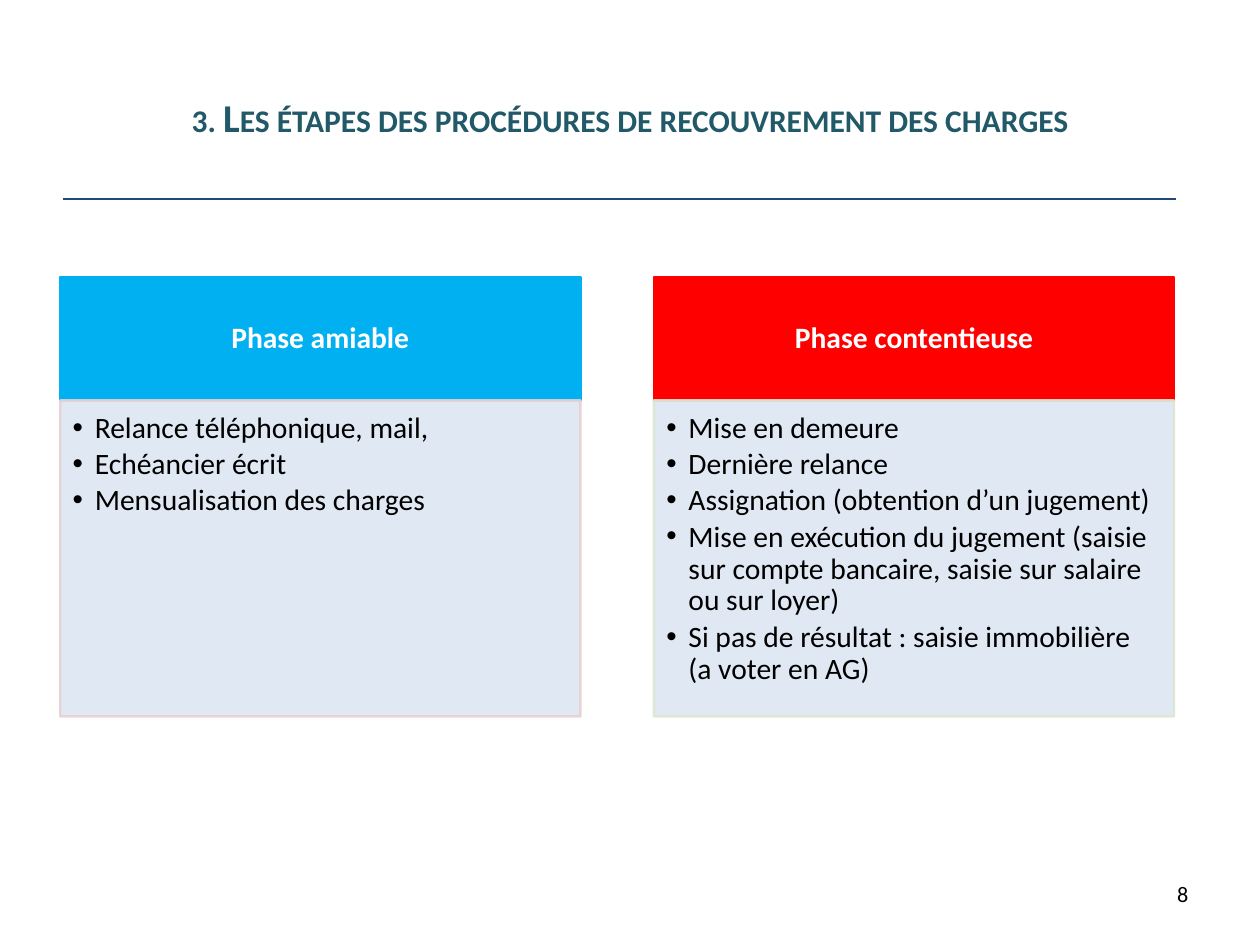
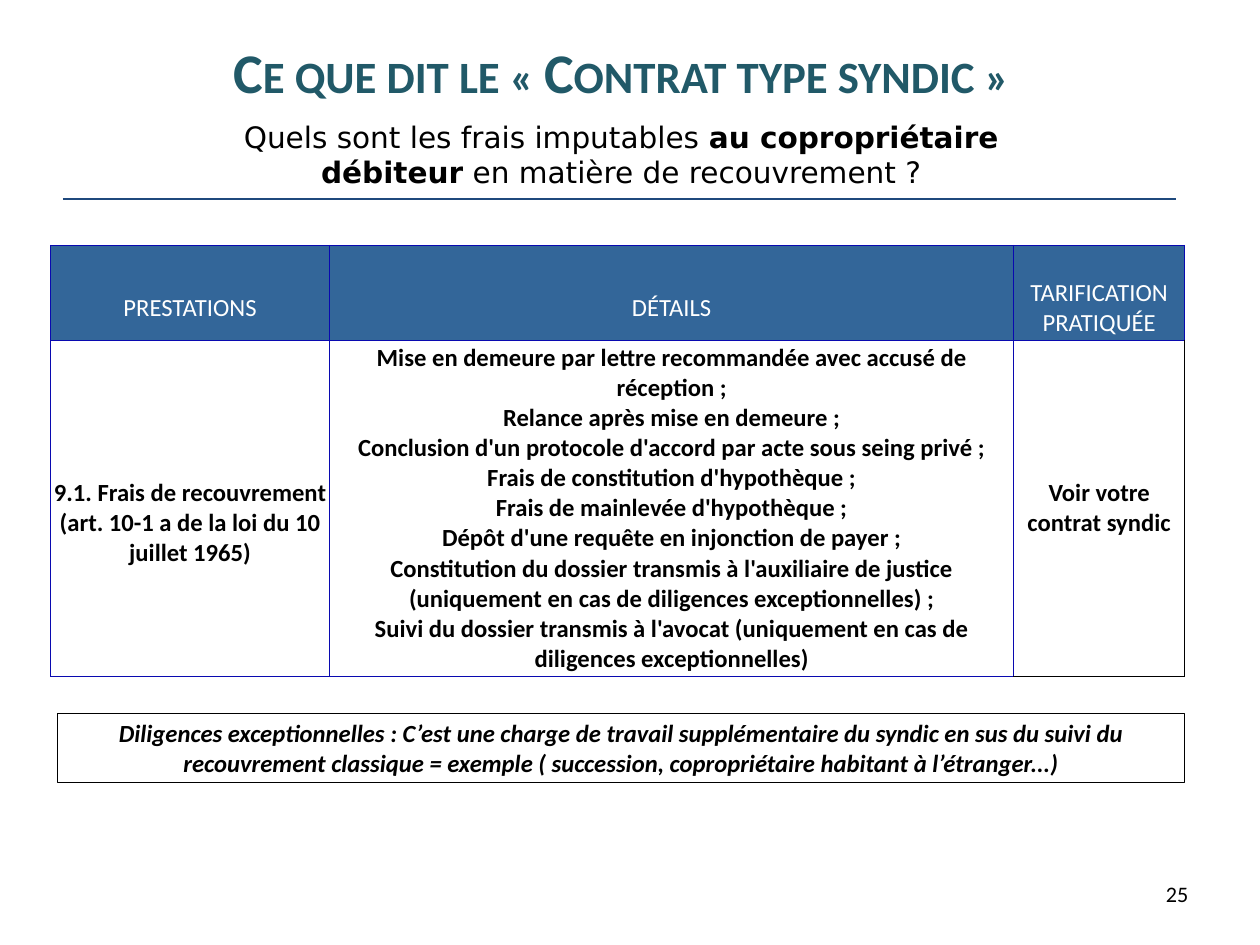
from lxml import etree
from pptx import Presentation
from pptx.dml.color import RGBColor
from pptx.enum.shapes import MSO_CONNECTOR, MSO_SHAPE
from pptx.enum.text import MSO_ANCHOR as Anchor, MSO_AUTO_SIZE as AutoSize, PP_ALIGN as Align
from pptx.oxml.ns import qn
from pptx.util import Inches, Pt

TEAL = RGBColor(0x21, 0x59, 0x68)
NAVY = RGBColor(0x1F, 0x49, 0x7D)
SKY = RGBColor(0x00, 0xB0, 0xF0)
RED = RGBColor(0xFF, 0x00, 0x00)
PALE_BLUE = RGBColor(0xDC, 0xE6, 0xF2)
PALE_PINK = RGBColor(0xE8, 0xD0, 0xD0)
PALE_GREEN = RGBColor(0xDE, 0xE7, 0xD1)
STEEL = RGBColor(0x33, 0x66, 0x99)
GRID_BLUE = RGBColor(0x09, 0x09, 0xB0)
BLACK = RGBColor(0x00, 0x00, 0x00)
WHITE = RGBColor(0xFF, 0xFF, 0xFF)

PHASES = [
    ("Phase amiable", SKY, PALE_PINK, [
        "Relance téléphonique, mail,",
        "Echéancier écrit",
        "Mensualisation des charges",
    ]),
    ("Phase contentieuse", RED, PALE_GREEN, [
        "Mise en demeure",
        "Dernière relance",
        "Assignation (obtention d’un jugement)",
        "Mise en exécution du jugement (saisie sur compte bancaire, "
        "saisie sur salaire ou sur loyer)",
        "Si pas de résultat : saisie immobilière (a voter en AG)",
    ]),
]
HEADINGS = ["PRESTATIONS", "DÉTAILS", "TARIFICATION PRATIQUÉE"]
FEES = [
    ["9.1. Frais de recouvrement", "(art. 10-1 a de la loi du 10 juillet 1965)"],
    [
        "Mise en demeure par lettre recommandée avec accusé de réception ;",
        "Relance après mise en demeure ;",
        "Conclusion d'un protocole d'accord par acte sous seing privé ;",
        "Frais de constitution d'hypothèque ;",
        "Frais de mainlevée d'hypothèque ;",
        "Dépôt d'une requête en injonction de payer ;",
        "Constitution du dossier transmis à l'auxiliaire de justice "
        "(uniquement en cas de diligences exceptionnelles) ;",
        "Suivi du dossier transmis à l'avocat "
        "(uniquement en cas de diligences exceptionnelles)",
    ],
    ["Voir votre contrat syndic"],
]
QUESTION = [
    ("Quels sont les frais imputables ", False),
    ("au copropriétaire débiteur", True),
    (" en matière de recouvrement ?", False),
]
NOTE = ("Diligences exceptionnelles : C’est une charge de travail supplémentaire du syndic "
        "en sus du suivi du recouvrement classique = exemple ( succession, copropriétaire "
        "habitant à l’étranger...)")


def place(part, box):
    part.left, part.top, part.width, part.height = (Inches(length) for length in box)


def set_margins(holder, left, top, right, bottom):
    holder.margin_left, holder.margin_top = Inches(left), Inches(top)
    holder.margin_right, holder.margin_bottom = Inches(right), Inches(bottom)


def style_run(run, size, color=BLACK, bold=False, italic=False, face="Calibri"):
    font = run.font
    font.name, font.size, font.bold, font.italic = face, Pt(size), bold, italic
    font.color.rgb = color


def write(frame, lines, size, align, **style):
    frame.text = "\n".join(lines)
    frame.word_wrap = True
    for paragraph in frame.paragraphs:
        paragraph.alignment = align
        for run in paragraph.runs:
            style_run(run, size, **style)


def add_alpha(part, percent):
    for color in part._element.spPr.iter(qn("a:srgbClr")):
        etree.SubElement(color, qn("a:alpha")).set("val", str(percent * 1000))


def add_frame(slide, title, title_box, title_size, number):
    heading = slide.shapes.title
    place(heading, title_box)
    frame = heading.text_frame
    write(frame, [title], title_size, Align.CENTER, color=TEAL, bold=True)
    frame.auto_size = AutoSize.NONE
    frame.vertical_anchor = Anchor.MIDDLE
    frame.paragraphs[0].runs[0]._r.get_or_add_rPr().set("cap", "small")

    rule = slide.shapes.add_connector(
        MSO_CONNECTOR.STRAIGHT, Inches(0.71), Inches(2.25), Inches(13.27), Inches(2.25))
    rule.line.color.rgb = NAVY
    rule.line.width = Pt(1.5)
    etree.SubElement(rule._element.spPr, qn("a:effectLst"))

    page = slide.shapes.add_textbox(Inches(10.19), Inches(9.89), Inches(3.32), Inches(0.57))
    write(page.text_frame, [number], 18, Align.RIGHT)


def fill_phase(header, body, box, phase):
    name, color, edge, steps = phase
    left, top, width, height = box
    header_height = 1.39
    place(header, (left, top, width, header_height))
    place(body, (left, top + header_height, width, height - header_height))
    for part, fill, line in ((header, color, color), (body, PALE_BLUE, edge)):
        part.fill.solid()
        part.fill.fore_color.rgb = fill
        part.line.color.rgb = line
        part.line.width = Pt(2)
    add_alpha(body, 90)

    write(header.text_frame, [name], 24, Align.CENTER, color=WHITE, bold=True)
    header.text_frame.vertical_anchor = Anchor.MIDDLE
    set_margins(header.text_frame, 0.19, 0.11, 0.19, 0.11)
    write(body.text_frame, steps, 24, Align.LEFT)
    body.text_frame.vertical_anchor = Anchor.TOP
    set_margins(body.text_frame, 0.14, 0.14, 0.19, 0.21)
    for part in (header, body):
        part.text_frame.auto_size = AutoSize.NONE
        for paragraph in part.text_frame.paragraphs:
            paragraph.line_spacing = 0.9
            paragraph.space_before = Pt(0)
    for paragraph in body.text_frame.paragraphs:
        paragraph.space_after = Pt(3.6)
        properties = paragraph._p.get_or_add_pPr()
        properties.set("marL", str(Inches(0.25)))
        properties.set("indent", str(-Inches(0.25)))


def add_borders(cell, colors):
    properties = cell._tc.get_or_add_tcPr()
    for side, color in zip("LRTB", colors):
        border = etree.SubElement(properties, qn(f"a:ln{side}"), w=str(Pt(0.75)))
        fill = etree.SubElement(border, qn("a:solidFill"))
        etree.SubElement(fill, qn("a:srgbClr"), val=str(color))


def add_fee_table(slide, box):
    table = slide.shapes.add_table(2, 3, *(Inches(length) for length in box)).table
    table.first_row = table.horz_banding = False
    for column, width in zip(table.columns, (3.15, 7.72, 1.93)):
        column.width = Inches(width)
    for row, height in zip(table.rows, (1.07, 3.8)):
        row.height = Inches(height)
    rows = [[[heading] for heading in HEADINGS], FEES]
    for r, contents in enumerate(rows):
        for c, lines in enumerate(contents):
            cell = table.cell(r, c)
            is_heading = r == 0
            is_price = r == 1 and c == 2
            outer = BLACK if is_price else GRID_BLUE
            add_borders(cell, (GRID_BLUE, outer, GRID_BLUE, outer))
            cell.fill.solid()
            cell.fill.fore_color.rgb = STEEL if is_heading else WHITE
            cell.vertical_anchor = Anchor.MIDDLE
            lowered = is_heading or c == 0
            side = 0.05 if is_price else 0.03
            set_margins(cell, side, 0.37 if lowered else 0.03, side, 0.03)
            write(cell.text_frame, lines, 20, Align.CENTER,
                  color=WHITE if is_heading else BLACK, bold=not is_heading)


def add_question(slide, box):
    question = slide.shapes.add_textbox(*(Inches(length) for length in box))
    question.text_frame.word_wrap = True
    paragraph = question.text_frame.paragraphs[0]
    paragraph.alignment = Align.CENTER
    for words, bold in QUESTION:
        run = paragraph.add_run()
        run.text = words
        style_run(run, 24, bold=bold, face="DejaVu Sans")


def add_note(slide, box):
    note = slide.shapes.add_shape(MSO_SHAPE.RECTANGLE, *(Inches(length) for length in box))
    note.shadow.inherit = False
    note.fill.background()
    note.line.color.rgb = BLACK
    note.line.width = Pt(0.75)
    write(note.text_frame, [NOTE], 20, Align.CENTER, bold=True, italic=True)
    note.text_frame.vertical_anchor = Anchor.TOP


def build_phases(deck):
    slide = deck.slides.add_slide(deck.slide_layouts.get_by_name("Comparison"))
    add_frame(slide, "3. Les étapes des procédures de recouvrement des charges",
              (0.71, 0.43, 12.8, 1.78), 32, "8")
    parts = {part.placeholder_format.idx: part for part in slide.placeholders}
    for i, phase in enumerate(PHASES):
        fill_phase(parts[2 * i + 1], parts[2 * i + 2], (0.68 + 6.7 * i, 3.13, 5.87, 4.96), phase)


def build_contract(deck):
    slide = deck.slides.add_slide(deck.slide_layouts.get_by_name("Title Only"))
    add_frame(slide, "Ce que dit le « Contrat type syndic »",
              (0.65, 0.22, 12.72, 1.16), 45.5, "25")
    add_fee_table(slide, (0.57, 2.77, 12.8, 4.87))
    add_note(slide, (0.65, 8.06, 12.72, 0.77))
    add_question(slide, (2.1, 1.29, 9.82, 0.91))


def main():
    deck = Presentation()
    deck.slide_width, deck.slide_height = Inches(14.22), Inches(10.67)
    build_phases(deck)
    build_contract(deck)
    deck.save("out.pptx")


if __name__ == "__main__":
    main()
